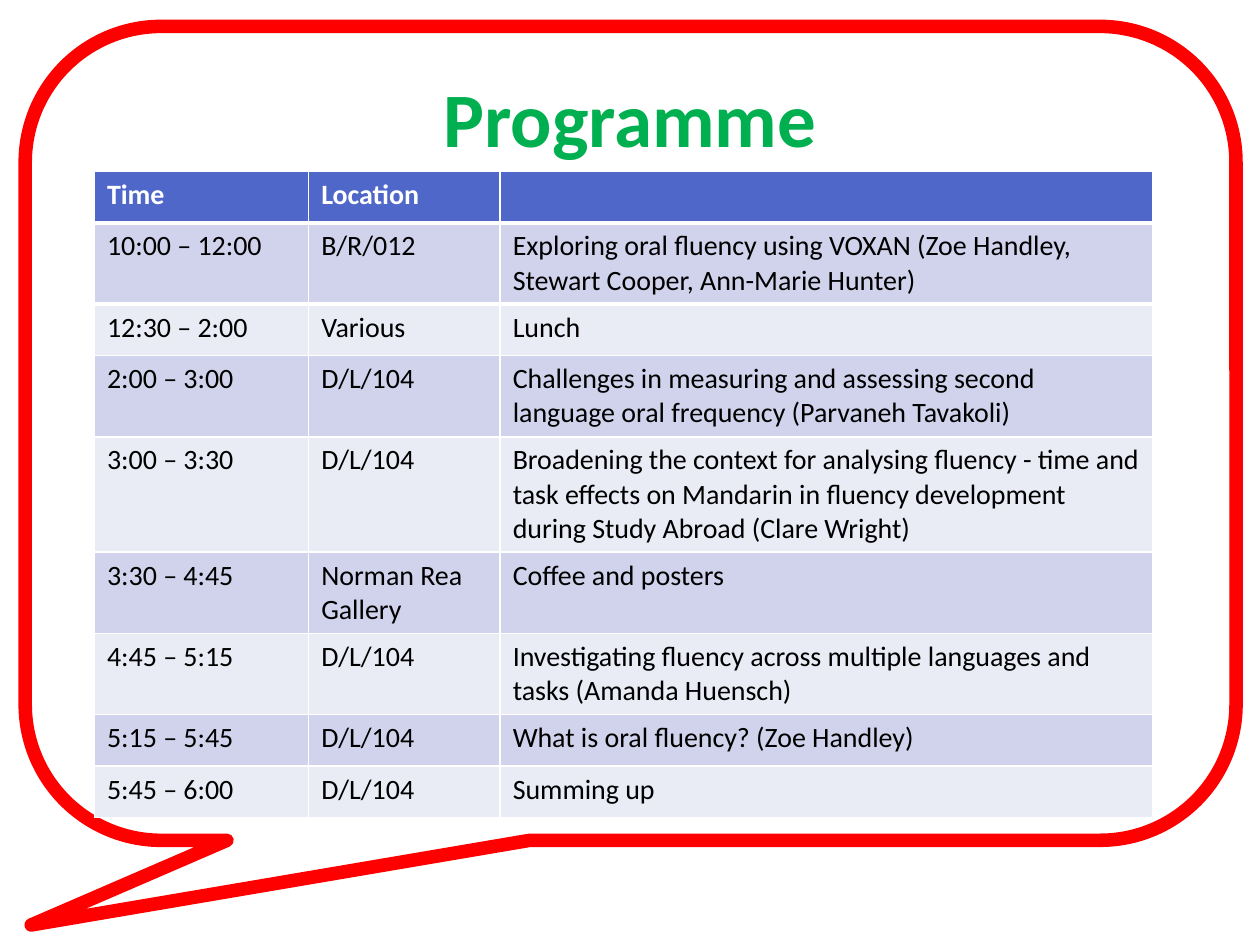
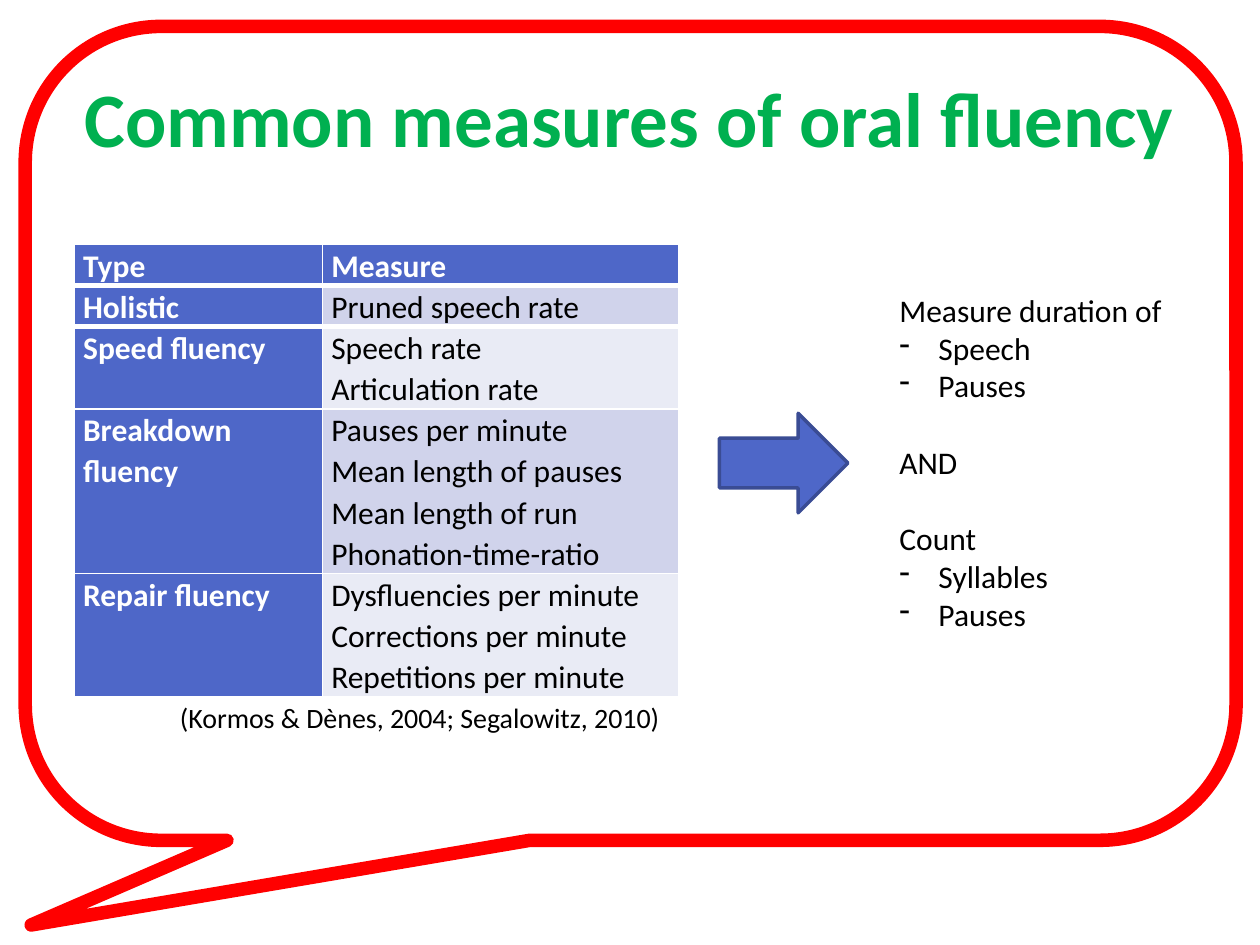
from lxml import etree
from pptx import Presentation
from pptx.dml.color import RGBColor
from pptx.enum import shapes, text
from pptx.oxml import ns
from pptx.util import Inches, Pt

FONT = "Calibri"
COLOURS = {
    "bubble": "FF0000",
    "title": "00B050",
    "accent": "4E67C8",
    "outline": "3A4C94",
    "odd": "D0D3EB",
    "even": "E9EBF5",
    "white": "FFFFFF",
    "black": "000000",
}

PROGRAMME = [
    ("Time", "Location", ""),
    ("10:00 – 12:00", "B/R/012",
     "Exploring oral fluency using VOXAN (Zoe Handley, Stewart Cooper, Ann-Marie Hunter)"),
    ("12:30 – 2:00", "Various", "Lunch"),
    ("2:00 – 3:00", "D/L/104",
     "Challenges in measuring and assessing second language oral frequency (Parvaneh Tavakoli)"),
    ("3:00 – 3:30", "D/L/104",
     "Broadening the context for analysing fluency - time and task effects on Mandarin "
     "in fluency development during Study Abroad (Clare Wright)"),
    ("3:30 – 4:45", "Norman Rea Gallery", "Coffee and posters"),
    ("4:45 – 5:15", "D/L/104",
     "Investigating fluency across multiple languages and tasks (Amanda Huensch)"),
    ("5:15 – 5:45", "D/L/104", "What is oral fluency? (Zoe Handley)"),
    ("5:45 – 6:00", "D/L/104", "Summing up"),
]
MEASURES = [
    ("Type", "Measure"),
    ("Holistic", "Pruned speech rate"),
    ("Speed fluency", "Speech rate\nArticulation rate"),
    ("Breakdown fluency",
     "Pauses per minute\nMean length of pauses\nMean length of run\nPhonation-time-ratio"),
    ("Repair fluency",
     "Dysfluencies per minute\nCorrections per minute\nRepetitions per minute"),
]
STEPS = [
    ("Measure duration of", ["Speech", "Pauses"]),
    ("AND", []),
    ("Count", ["Syllables", "Pauses"]),
]
CITATION = "(Kormos & Dènes, 2004; Segalowitz, 2010)"


def colour(name):
    return RGBColor.from_string(COLOURS[name])


def format_text(frame, size, name="black", bold=False):
    for para in frame.paragraphs:
        for span in para.runs:
            span.font.name = FONT
            span.font.size = Pt(size)
            span.font.bold = bold
            span.font.color.rgb = colour(name)


def add_outlined(page, kind, place, line, width, fill=None):
    shape = page.shapes.add_shape(kind, *map(Inches, place))
    shape.shadow.inherit = False
    if fill:
        shape.fill.solid()
        shape.fill.fore_color.rgb = colour(fill)
    else:
        shape.fill.background()
    shape.line.color.rgb = colour(line)
    shape.line.width = Pt(width)
    etree.SubElement(shape.element.spPr.find(ns.qn("a:ln")), ns.qn("a:round"))
    return shape


def add_page(deck, heading):
    page = deck.slides.add_slide(deck.slide_layouts[5])
    title = page.shapes.title
    title.left, title.top, title.width, title.height = map(Inches, (0.5, 0.3, 9, 1.25))
    title.text_frame.text = heading
    title.text_frame.vertical_anchor = text.MSO_ANCHOR.MIDDLE
    title.text_frame.paragraphs[0].alignment = text.PP_ALIGN.CENTER
    format_text(title.text_frame, 44, "title", True)
    bubble = add_outlined(page, shapes.MSO_SHAPE.ROUNDED_RECTANGULAR_CALLOUT,
                          (0.2, 0.21, 9.61, 6.46), "bubble", 7.75)
    for index, value in enumerate((-0.495, 0.604, 0.167)):
        bubble.adjustments[index] = value
    title.element.addprevious(bubble.element)
    return page


def add_border(cell, side, width):
    line = etree.Element(ns.qn(f"a:{side}"), w=str(Pt(width)))
    fill = etree.SubElement(line, ns.qn("a:solidFill"))
    etree.SubElement(fill, ns.qn("a:srgbClr"), val=COLOURS["white"])
    cell._tc.get_or_add_tcPr().insert(0, line)


def add_grid(page, rows, left, top, widths, heights, size, first_col=False, tight=False):
    frame = page.shapes.add_table(len(rows), len(widths), Inches(left), Inches(top),
                                  Inches(sum(widths)), Inches(sum(heights)))
    table = frame.table
    table.first_col = first_col
    for column, width in zip(table.columns, widths):
        column.width = Inches(width)
    for r, (row, height) in enumerate(zip(rows, heights)):
        table.rows[r].height = Inches(height)
        for c, words in enumerate(row):
            cell = table.cell(r, c)
            cell.text_frame.text = words
            heading = r == 0 or (first_col and c == 0)
            cell.fill.solid()
            cell.fill.fore_color.rgb = colour("accent" if heading else "odd" if r % 2 else "even")
            format_text(cell.text_frame, size, "white" if heading else "black", heading)
            if r < 2:
                add_border(cell, "lnT" if r else "lnB", 3)
            if tight:
                cell.margin_left = cell.margin_right = Inches(0.07)
                cell.margin_top = cell.margin_bottom = 0
                for para in cell.text_frame.paragraphs:
                    para.line_spacing = 1.07


def add_dash(para):
    props = para._p.get_or_add_pPr()
    props.set("marL", str(Inches(0.31)))
    props.set("indent", str(-Inches(0.31)))
    etree.SubElement(props, ns.qn("a:buChar"), char="-")


def add_text_box(page, place, wrap):
    box = page.shapes.add_textbox(*map(Inches, place))
    box.text_frame.word_wrap = wrap
    box.text_frame.auto_size = text.MSO_AUTO_SIZE.SHAPE_TO_FIT_TEXT
    return box.text_frame


def add_steps(page):
    frame = add_text_box(page, (7.04, 2.26, 2.53, 2.83), True)
    lines = [(line, i > 0 and line is head, line is not head)
             for i, (head, items) in enumerate(STEPS) for line in [head, *items]]
    frame.text = "\n".join(line for line, _, _ in lines)
    for para, (_, gap, dashed) in zip(frame.paragraphs, lines):
        if gap:
            para.space_before = Pt(22)
        if dashed:
            add_dash(para)
    format_text(frame, 18)


def main():
    deck = Presentation()
    deck.slide_width, deck.slide_height = Inches(10), Inches(7.5)

    page = add_page(deck, "Programme")
    add_grid(page, PROGRAMME, 0.75, 1.36, (1.7, 1.52, 5.18), [0.41] * len(PROGRAMME), 16)

    page = add_page(deck, "Common measures of oral fluency")
    heights = [0.32 * len(row[1].split("\n")) for row in MEASURES]
    add_grid(page, MEASURES, 0.59, 1.94, (1.97, 2.83), heights, 18, first_col=True, tight=True)
    add_outlined(page, shapes.MSO_SHAPE.RIGHT_ARROW, (5.71, 3.28, 1.02, 0.79),
                 "outline", 2, "accent")
    add_steps(page)
    citation = add_text_box(page, (1.33, 5.51, 4.06, 0.37), False)
    citation.text = CITATION
    format_text(citation, 16)

    deck.save("out.pptx")


if __name__ == "__main__":
    main()
